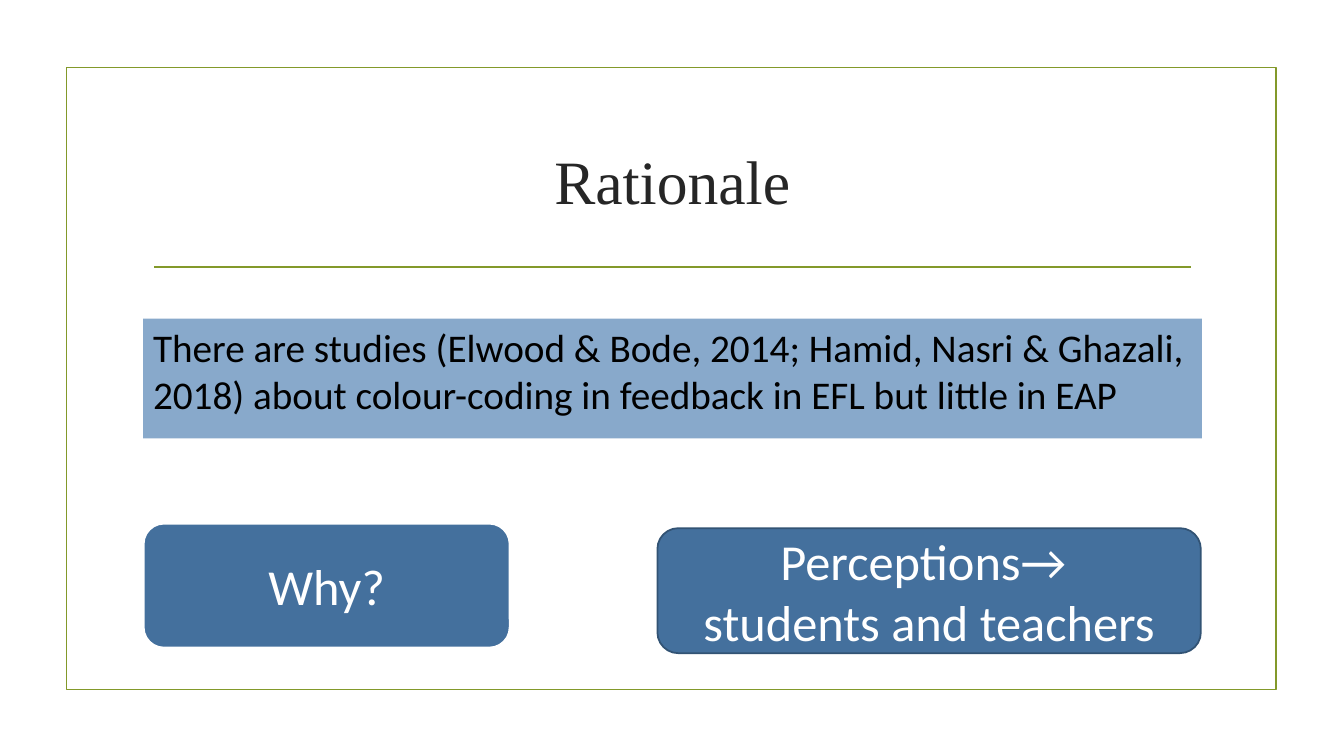
from lxml import etree
from pptx import Presentation
from pptx.dml.color import RGBColor
from pptx.enum.shapes import MSO_CONNECTOR as Connector, MSO_SHAPE as Shape
from pptx.enum.text import MSO_ANCHOR as Anchor, PP_ALIGN as Align
from pptx.oxml.ns import qn
from pptx.util import Inches, Pt

COLOURS = {
    "olive": "83992A",
    "title": "262626",
    "pale blue": "88A9CB",
    "blue": "44709D",
    "dark blue": "325374",
    "white": "FFFFFF",
    "black": "000000",
}
LEFT, WIDTH = 1.42, 10.5


def colour(name):
    return RGBColor.from_string(COLOURS[name])


def set_line(line, name, width):
    line.color.rgb = colour(name)
    line.width = Pt(width)


def add_panel(page, kind, bounds, fill=None, line=None, line_width=1.25):
    """Add a preset shape; no fill or line is drawn unless a colour is named."""
    panel = page.shapes.add_shape(kind, *map(Inches, bounds))
    panel.shadow.inherit = False
    if fill:
        panel.fill.solid()
        panel.fill.fore_color.rgb = colour(fill)
    else:
        panel.fill.background()
    if line:
        set_line(panel.line, line, line_width)
    else:
        panel.line.fill.background()
    return panel


def add_rule(page, start, end):
    rule = page.shapes.add_connector(Connector.STRAIGHT, *map(Inches, start + end))
    set_line(rule.line, "olive", 1.25)
    etree.SubElement(rule._element.spPr, qn("a:effectLst"))


def write(shape, lines, size, name, font="Calibri", align=Align.CENTER, anchor=Anchor.MIDDLE):
    """Put one paragraph per line into the shape."""
    frame = shape.text_frame
    frame.word_wrap = True
    frame.vertical_anchor = anchor
    for index, text in enumerate(lines):
        para = frame.paragraphs[0] if index == 0 else frame.add_paragraph()
        para.alignment = align
        span = para.add_run()
        span.text = text
        span.font.size = Pt(size)
        span.font.name = font
        span.font.color.rgb = colour(name)


def main():
    deck = Presentation()
    deck.slide_width, deck.slide_height = Inches(13.33), Inches(7.5)
    page = deck.slides.add_slide(deck.slide_layouts[6])

    add_panel(page, Shape.RECTANGLE, (0.66, 0.67, 12, 6.17), line="olive")
    add_rule(page, (1.53, 2.65), (11.81, 2.65))

    title = page.shapes.add_textbox(*map(Inches, (LEFT, 1.07, WIDTH, 1.43)))
    write(title, ["Rationale"], 44, "title", font="Times New Roman")

    studies = add_panel(page, Shape.RECTANGLE, (LEFT, 3.16, WIDTH, 1.19), fill="pale blue")
    write(studies, ["There are studies (Elwood & Bode, 2014; Hamid, Nasri & Ghazali, 2018) "
                    "about colour-coding in feedback in EFL but little in EAP"],
          28, "black", align=Align.LEFT, anchor=Anchor.TOP)

    buttons = [
        ((LEFT, 5.19, 3.64, 1.24), "white", 2, ["Why?"]),
        ((6.52, 5.24, 5.39, 1.24), "dark blue", 1.25,
         ["Perceptions→ ", "students and teachers"]),
    ]
    for bounds, line, line_width, lines in buttons:
        button = add_panel(page, Shape.ROUNDED_RECTANGLE, bounds, "blue", line, line_width)
        write(button, lines, 36, "white")

    deck.save("out.pptx")


if __name__ == "__main__":
    main()
